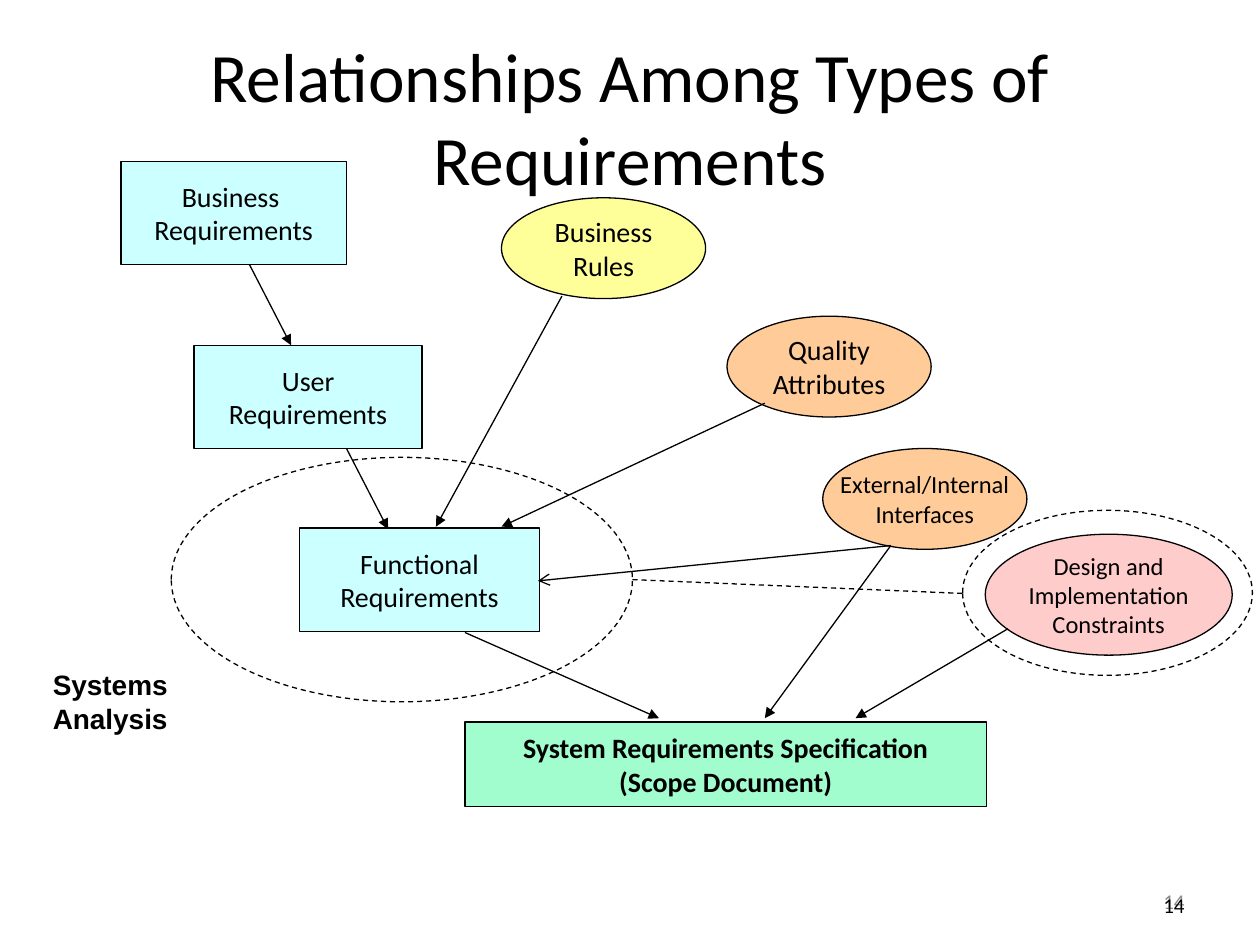
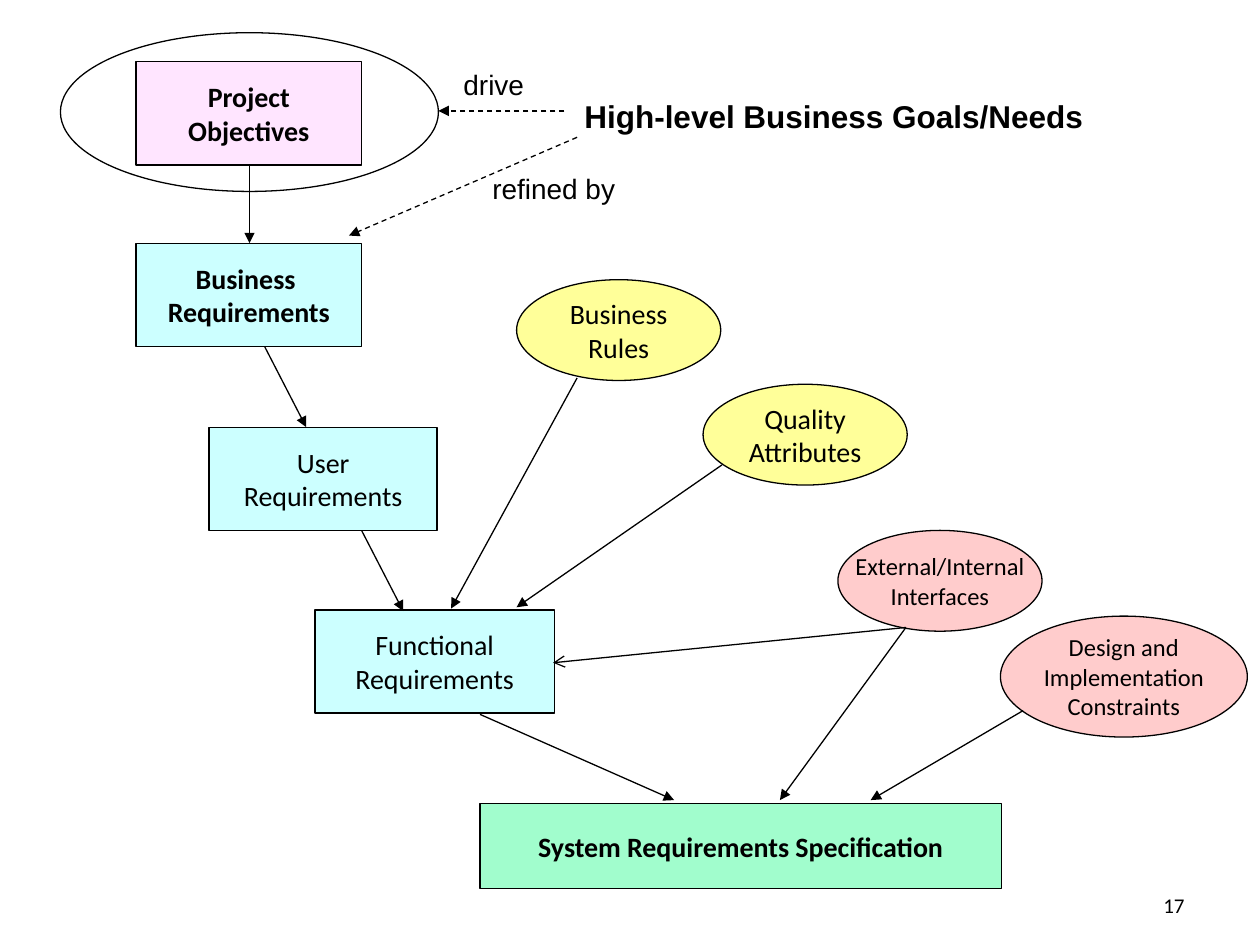
from lxml import etree
from pptx import Presentation
from pptx.dml.color import RGBColor
from pptx.enum.dml import MSO_LINE
from pptx.enum.shapes import MSO_CONNECTOR, MSO_SHAPE
from pptx.enum.text import MSO_ANCHOR, MSO_AUTO_SIZE, PP_ALIGN
from pptx.oxml.ns import qn
from pptx.util import Inches, Pt

RECT, ELLIPSE = MSO_SHAPE.RECTANGLE, MSO_SHAPE.OVAL
STRAIGHT, DASH = MSO_CONNECTOR.STRAIGHT, MSO_LINE.DASH
LEFT, CENTER, RIGHT = PP_ALIGN.LEFT, PP_ALIGN.CENTER, PP_ALIGN.RIGHT
TOP, MIDDLE, BOTTOM = MSO_ANCHOR.TOP, MSO_ANCHOR.MIDDLE, MSO_ANCHOR.BOTTOM
NO_FIT = MSO_AUTO_SIZE.NONE
TITLE_ONLY, BLANK = 5, 6

BLACK, GRAY = "000000", "8C8C8C"
CYAN, YELLOW, ORANGE = "CCFFFF", "FFFF99", "FFCC99"
PINK, GREEN, LILAC = "FFCCCC", "A1FDCD", "FFE5FF"
NUMBER_AREA = (7.17, 6.83, 2.33, 0.5)
GRAY_NUMBER_AREA = (7.17, 6.95, 2.33, 0.4)


def color(value):
    """Turn a hex string into a colour."""
    return RGBColor.from_string(value)


class Diagram:
    """Hold the style and the current slide, and draw elements on it."""

    def __init__(self, deck):
        """Start with no slide and no offset."""
        self.deck = deck
        self.page = None
        self.dx = self.dy = 0

    def new_page(self, layout):
        """Add a slide with the given layout."""
        self.page = self.deck.slides.add_slide(self.deck.slide_layouts[layout])
        self.shift(0, 0)

    def shift(self, dx, dy):
        """Set the offset for the elements that follow."""
        self.dx, self.dy = dx, dy

    def place(self, area):
        """Convert left, top, width and height to lengths with the offset."""
        left, top, width, height = area
        return [Inches(v) for v in (left + self.dx, top + self.dy, width, height)]

    def fill_text(self, box, lines, size, align=CENTER, anchor=MIDDLE, wrap=False,
                  bold=False, font="Calibri", ink=BLACK):
        """Fill a box with one paragraph for each line."""
        frame = box.text_frame
        frame_format = {"word_wrap": wrap, "vertical_anchor": anchor, "auto_size": NO_FIT}
        for name, value in frame_format.items():
            setattr(frame, name, value)
        for index, line in enumerate(lines):
            para = frame.add_paragraph() if index else frame.paragraphs[0]
            para.alignment = align
            span = para.add_run()
            span.text = line
            for name, value in {"size": Pt(size), "bold": bold, "name": font}.items():
                setattr(span.font, name, value)
            span.font.color.rgb = color(ink)

    def title(self, text):
        """Place and format the title."""
        box = self.page.shapes.title
        names = ("left", "top", "width", "height")
        for name, value in zip(names, self.place((0.5, 0.3, 9, 1.25))):
            setattr(box, name, value)
        self.fill_text(box, [text], 39.6, wrap=True)

    def outline(self, line, dash=False):
        """Give a line the common colour and width."""
        line.color.rgb = color(BLACK)
        line.width = Pt(0.75)
        if dash:
            line.dash_style = DASH

    def shape(self, kind, area, lines=(), fill=None, size=16, bold=False, dash=False):
        """Draw a labelled box or ellipse."""
        box = self.page.shapes.add_shape(kind, *self.place(area))
        box.shadow.inherit = False
        if fill:
            box.fill.solid()
            box.fill.fore_color.rgb = color(fill)
        else:
            box.fill.background()
        self.outline(box.line, dash)
        self.fill_text(box, lines, size, bold=bold)

    def text(self, area, text, size, **style):
        """Draw a text box."""
        box = self.page.shapes.add_textbox(*self.place(area))
        self.fill_text(box, [text], size, **style)

    def label(self, area, text, size=16, **style):
        """Draw an Arial caption that starts at the top of its area."""
        self.text(area, text, size, font="Arial", anchor=TOP, **style)

    def number(self, text, area=NUMBER_AREA, anchor=BOTTOM, ink=BLACK):
        """Draw the page number."""
        self.text(area, text, 12, align=RIGHT, anchor=anchor, wrap=True, ink=ink)

    def arrow(self, start, end, head="triangle", dash=False):
        """Draw a straight line with an optional head at its end."""
        points = [Inches(v) for x, y in (start, end) for v in (x + self.dx, y + self.dy)]
        link = self.page.shapes.add_connector(STRAIGHT, *points)
        self.outline(link.line, dash)
        properties = link.element.spPr
        if head:
            etree.SubElement(properties.find(qn("a:ln")), qn("a:tailEnd"), type=head)
        etree.SubElement(properties, qn("a:effectLst"))


def draw_requirements(diagram, business_bold, quality_area, quality_arrow,
                      quality_fill, interface_fill, specification):
    """Draw the flow of requirements that both slides share."""
    steps = [
        ((0.96, 1.28, 1.79, 0.82), "Business ", business_bold),
        ((1.54, 2.74, 1.81, 0.82), "User", False),
        ((2.38, 4.19, 1.9, 0.82), "Functional", False),
    ]
    for area, name, bold in steps:
        diagram.shape(RECT, area, [name, "Requirements"], CYAN, bold=bold)
    diagram.shape(RECT, (3.69, 5.73, 4.14, 0.67), specification, GREEN, bold=True)

    sources = [
        ((3.98, 1.57, 1.62, 0.8), ["Business", "Rules"], YELLOW, 16),
        (quality_area, ["Quality", "Attributes"], quality_fill, 16),
        ((6.53, 3.56, 1.62, 0.8), ["External/Internal", "Interfaces"], interface_fill, 14),
        ((7.82, 4.24, 1.96, 0.96), ["Design and", "Implementation", "Constraints"], PINK, 14),
    ]
    for area, lines, fill, size in sources:
        diagram.shape(ELLIPSE, area, lines, fill, size)

    interface_exit = (7.07, 4.33)
    arrows = [
        ((1.98, 2.1), (2.31, 2.74)),
        ((2.75, 3.56), (3.08, 4.2)),
        ((4.46, 2.35), (3.46, 4.18)),
        quality_arrow,
        ((3.69, 5.02), (5.23, 5.7)),
        (interface_exit, (6.07, 5.7)),
        ((8, 4.99), (6.79, 5.7)),
    ]
    for start, end in arrows:
        diagram.arrow(start, end)
    diagram.arrow(interface_exit, (4.27, 4.61), head="arrow")


def draw_relationships(diagram):
    """Draw the slide on relationships among requirements."""
    diagram.new_page(TITLE_ONLY)
    diagram.number("14", GRAY_NUMBER_AREA, MIDDLE, GRAY)
    diagram.number("14")
    diagram.title("Relationships Among Types of Requirements")
    draw_requirements(
        diagram, False, (5.77, 2.51, 1.62, 0.8), ((6.07, 3.2), (3.98, 4.18)),
        ORANGE, ORANGE, ["System Requirements Specification", "(Scope Document)"])
    for area in ((7.64, 4.05, 2.3, 1.31), (1.36, 3.63, 3.66, 1.94)):
        diagram.shape(ELLIPSE, area, dash=True)
    diagram.arrow((5.02, 4.6), (7.64, 4.71), head=None, dash=True)
    diagram.label((0.19, 5.25, 1.37, 0.64), "Systems Analysis", bold=True, wrap=True)


def draw_goals(diagram):
    """Draw the slide that starts from business goals."""
    diagram.new_page(BLANK)
    diagram.number("17")
    diagram.shift(0.12, 0.65)
    draw_requirements(
        diagram, True, (5.46, 2.4, 1.62, 0.8), ((5.61, 3.04), (3.98, 4.17)),
        YELLOW, PINK, ["System Requirements Specification"])
    diagram.shift(0, 0)
    diagram.shape(RECT, (1.08, 0.49, 1.79, 0.82), ["Project", "Objectives"], LILAC, bold=True)
    diagram.shape(ELLIPSE, (0.48, 0.26, 3, 1.26))
    diagram.arrow((1.98, 1.31), (1.98, 1.93))
    diagram.arrow((4.58, 1.09), (2.77, 1.87), dash=True)
    diagram.arrow((4.48, 0.88), (3.48, 0.88), dash=True)
    diagram.label((4.54, 0.72, 4.16, 0.4), "High-level Business Goals/Needs", 18,
                  bold=True, align=LEFT)
    diagram.label((3.81, 1.31, 1.18, 0.37), "refined by", align=LEFT)
    diagram.label((3.58, 0.49, 0.68, 0.37), "drive", align=LEFT)


def main():
    """Build and save the deck."""
    deck = Presentation()
    deck.slide_width, deck.slide_height = Inches(10), Inches(7.5)
    diagram = Diagram(deck)
    draw_relationships(diagram)
    draw_goals(diagram)
    deck.save("out.pptx")


if __name__ == "__main__":
    main()
